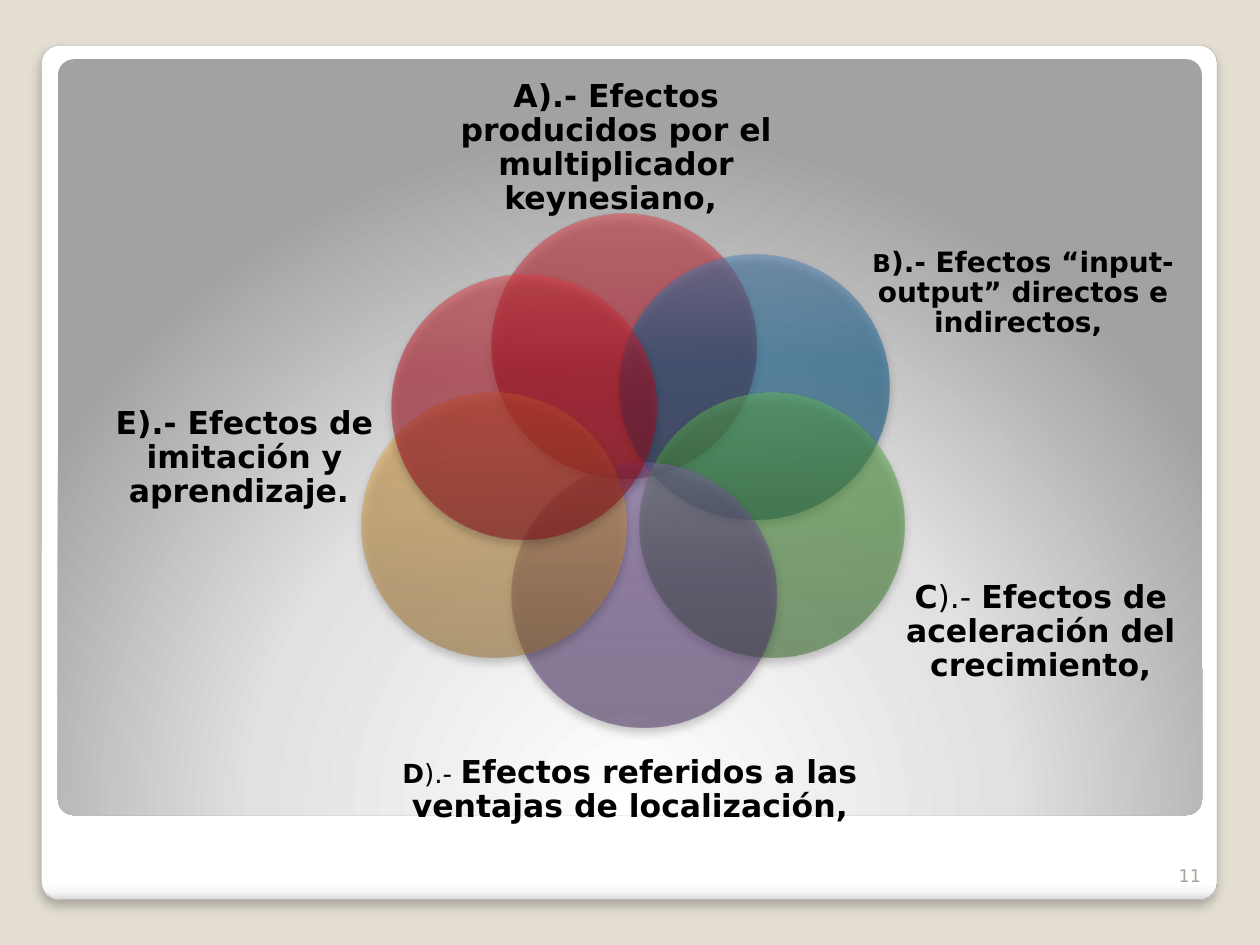
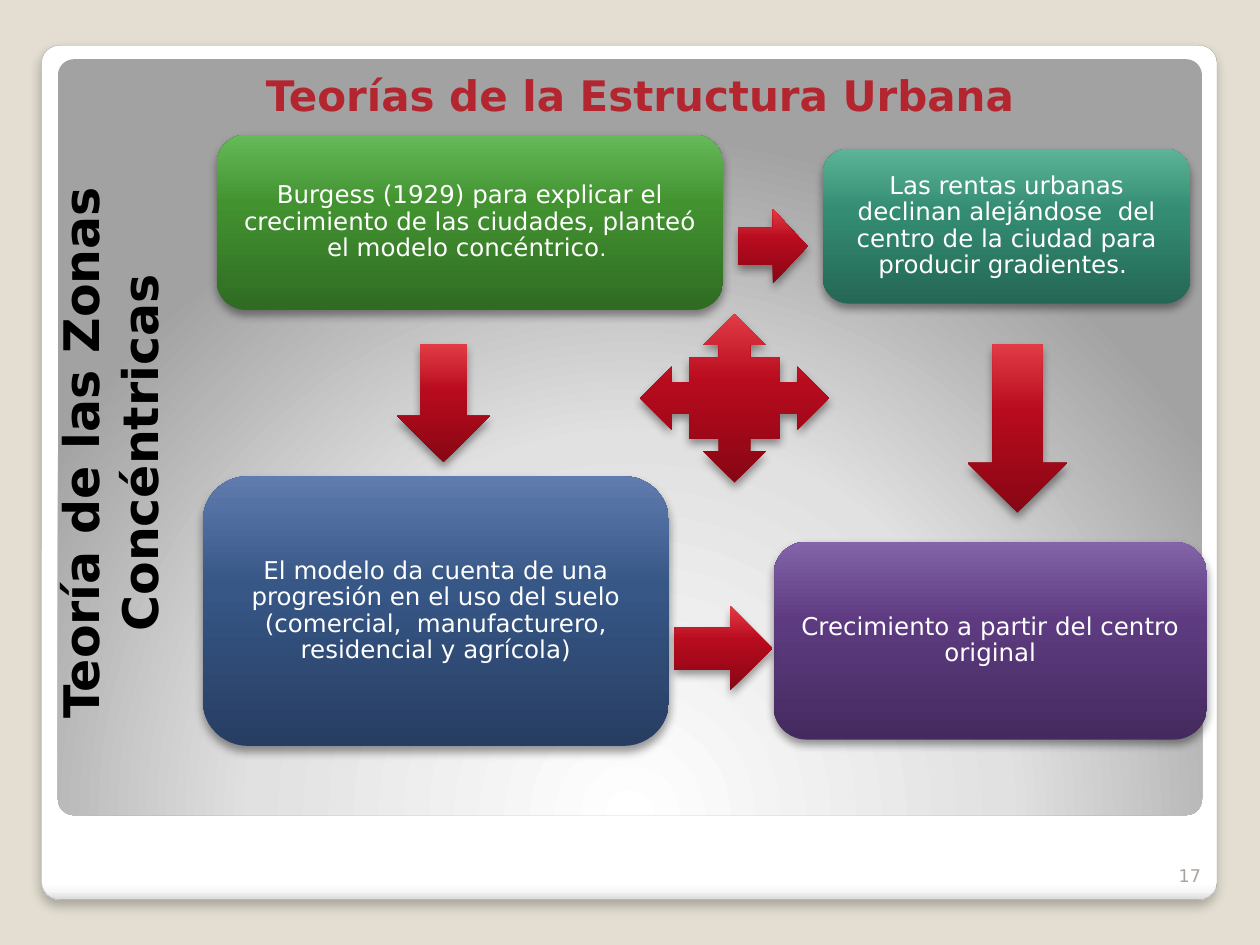
from dataclasses import dataclass

from lxml import etree
from pptx import Presentation
from pptx.dml.color import RGBColor
from pptx.enum import shapes, text
from pptx.oxml import ns
from pptx.util import Emu, Pt

EMU_PER_PX = 9144
SHAPE = shapes.MSO_SHAPE
ANCHOR = text.MSO_ANCHOR
ALIGN = text.PP_ALIGN


@dataclass(frozen=True)
class Theme:
    font: str = "DejaVu Sans"
    background: str = "E3DED1"
    ink: str = "000000"
    paper: str = "FFFFFF"
    title: str = "B3262F"
    number: str = "A8A49B"
    frame_line: str = "A4A4A4"
    red: tuple = ("870614", "B80B1E", "E13C45")
    blue: tuple = ("00436A", "035C91", "4A80B7")
    green: tuple = ("2F6B22", "429230", "66B959")
    purple: tuple = ("442A5E", "5E3B81", "8364A8")
    orange: tuple = ("9D702B", "D69A3E", "FFB14C")
    teal: tuple = ("246754", "348D73", "5CB397")
    navy: tuple = ("273E62", "375787", "607BAE")
    frame_stops: tuple = ((0, "FFFFFF"), (98, "FFFFFF"), (99, "F7F7F7"), (100, "DADADA"))
    panel_stops: tuple = ((0, "FFFFFF"), (55, "E1E1E1"), (100, "A2A2A2"))
    title_size: int = 24
    side_size: int = 28
    label_size: int = 18
    box_size: int = 14
    number_size: int = 10
    frame_shadow: tuple = (25, 6, 4)
    shape_shadow: tuple = (40, 5.2, 3)


def px(length):
    return Emu(length * EMU_PER_PX)


def add_node(parent, tag, **attributes):
    values = {name: str(value) for name, value in attributes.items()}
    return etree.SubElement(parent, ns.qn(tag), values)


def add_color(parent, color, opacity=100):
    node = add_node(parent, "a:srgbClr", val=color)
    if opacity < 100:
        add_node(node, "a:alpha", val=opacity * 1000)


class Deck:
    def __init__(self, theme):
        self.theme = theme
        self.presentation = Presentation()
        self.presentation.slide_width = px(1000)
        self.presentation.slide_height = px(750)
        self.slide = None
        fill = self.presentation.slide_master.background.fill
        fill.solid()
        fill.fore_color.rgb = RGBColor.from_string(theme.background)

    def add_slide(self, number, title=None):
        layout = self.presentation.slide_layouts[5 if title else 6]
        self.slide = self.presentation.slides.add_slide(layout)
        if len(self.presentation.slides) == 1:
            self.add_master_frame()
        if title:
            self.add_title(title)
        self.add_text((913, 668, 50, 40), [(number,)], self.theme.number_size,
                      self.theme.number, align=ALIGN.RIGHT, anchor=ANCHOR.BOTTOM)

    def add_master_frame(self):
        theme = self.theme
        frame = self.add_shape(SHAPE.ROUNDED_RECTANGLE, (33, 36, 933, 678),
                               theme.frame_stops, theme.frame_shadow, angle=90)
        frame.line.color.rgb = RGBColor.from_string(theme.frame_line)
        frame.line.width = Pt(0.16)
        panel = self.add_shape(SHAPE.ROUNDED_RECTANGLE, (46, 47, 908, 600),
                               theme.panel_stops, angle=None)
        tree = self.presentation.slide_master.shapes.element
        for order, shape in enumerate((frame, panel)):
            shape.adjustments[0] = 0.021
            shape.element.nvSpPr.cNvPr.set("id", str(90 + order))
            tree.insert(2 + order, shape.element)

    def add_title(self, title):
        shape = self.slide.shapes.title
        shape.left, shape.top, shape.width, shape.height = map(px, (58, 29, 900, 71))
        self.set_text(shape, [(title,)], self.theme.title_size, self.theme.title,
                      bold=True, anchor=ANCHOR.BOTTOM)

    def add_shape(self, kind, box, stops, shadow=None, angle=270, opacity=100):
        shape = self.slide.shapes.add_shape(kind, *map(px, box))
        gradient = etree.Element(ns.qn("a:gradFill"), rotWithShape="1")
        stop_list = add_node(gradient, "a:gsLst")
        for position, color in stops:
            add_color(add_node(stop_list, "a:gs", pos=position * 1000), color, opacity)
        if angle is None:
            circle = add_node(gradient, "a:path", path="circle")
            add_node(circle, "a:fillToRect", l=50000, t=175000, r=50000, b=-75000)
        else:
            add_node(gradient, "a:lin", ang=angle * 60000, scaled=0)
        properties = shape.element.spPr
        properties.find(ns.qn("a:prstGeom")).addnext(gradient)
        shape.line.fill.background()
        shape.shadow.inherit = False
        if shadow:
            darkness, blur, distance = shadow
            effects = properties.find(ns.qn("a:effectLst"))
            add_color(add_node(effects, "a:outerShdw", blurRad=Pt(blur), dist=Pt(distance),
                               dir=90 * 60000, algn="ctr", rotWithShape=0),
                      self.theme.ink, darkness)
        return shape

    def add_glossy(self, kind, box, colors, opacity=100):
        return self.add_shape(kind, box, tuple(zip((0, 60, 100), colors)),
                              self.theme.shape_shadow, opacity=opacity)

    def add_box(self, box, colors, runs):
        shape = self.add_glossy(SHAPE.ROUNDED_RECTANGLE, box, colors)
        self.set_text(shape, runs, self.theme.box_size, self.theme.paper,
                      spacing=0.9, insets=(6, 3))

    def add_text(self, box, runs, size, color, **style):
        shape = self.slide.shapes.add_textbox(*map(px, box))
        self.set_text(shape, runs, size, color, **style)
        return shape

    def add_label(self, box, runs):
        self.add_text(box, runs, self.theme.label_size, self.theme.ink,
                      bold=True, spacing=0.9, insets=(0, 0))

    def add_side_title(self, box, words):
        shape = self.add_text(box, [(words,)], self.theme.side_size, self.theme.ink,
                              bold=True, anchor=ANCHOR.TOP)
        shape.text_frame.auto_size = text.MSO_AUTO_SIZE.SHAPE_TO_FIT_TEXT
        shape.element.txBody.bodyPr.set("vert", "vert270")

    def set_text(self, shape, runs, size, color, bold=False, align=ALIGN.CENTER,
                 anchor=ANCHOR.MIDDLE, spacing=None, insets=(10, 5)):
        frame = shape.text_frame
        frame.word_wrap = True
        frame.auto_size = text.MSO_AUTO_SIZE.NONE
        frame.vertical_anchor = anchor
        frame.margin_left = frame.margin_right = px(insets[0])
        frame.margin_top = frame.margin_bottom = px(insets[1])
        paragraph = frame.paragraphs[0]
        paragraph.alignment = align
        paragraph.line_spacing = spacing
        font = paragraph.font
        font.name = self.theme.font
        font.size = Pt(size)
        font.bold = bold
        font.color.rgb = RGBColor.from_string(color)
        for words, *changes in runs:
            run = paragraph.add_run()
            run.text = words
            style = changes[0] if changes else {}
            if "size" in style:
                run.font.size = Pt(style["size"])
            if "bold" in style:
                run.font.bold = style["bold"]


def build_effects(deck):
    theme = deck.theme
    deck.add_slide("11")
    petals = [
        ((390, 170, 210, 210), theme.red),
        ((492, 202, 214, 210), theme.blue),
        ((508, 312, 210, 210), theme.green),
        ((406, 367, 210, 210), theme.purple),
        ((287, 312, 210, 210), theme.orange),
        ((311, 218, 210, 210), theme.red),
    ]
    for box, colors in petals:
        deck.add_glossy(SHAPE.OVAL, box, colors, opacity=50)
    labels = [
        ((358, 13, 262, 210),
         [("A).- Efectos producidos por el multiplicador keynesiano, ",)]),
        ((688, 155, 248, 156),
         [("B", {"size": 14}),
          (").- Efectos “input-output” directos e indirectos, ", {"size": 16})]),
        ((702, 414, 248, 175),
         [("C",), (").- ", {"bold": False}), ("Efectos de aceleración del crecimiento,",)]),
        ((258, 482, 484, 290),
         [("D", {"size": 15}), (").- ", {"size": 15, "bold": False}),
          ("Efectos referidos a las ventajas de localización,",)]),
        ((70, 281, 248, 166), [("E).- Efectos de imitación y aprendizaje. ",)]),
    ]
    for box, runs in labels:
        deck.add_label(box, runs)


def build_zones(deck):
    theme = deck.theme
    deck.add_slide("17", "Teorías de la Estructura Urbana")
    boxes = [
        ((172, 107, 402, 139), theme.green,
         [("Burgess (1929) para explicar el crecimiento de las ciudades, "
           "planteó el modelo concéntrico",), (". ", {"size": 12})]),
        ((653, 118, 292, 123), theme.teal,
         [("Las rentas urbanas declinan alejándose  del centro de la ciudad "
           "para producir gradientes. ",)]),
        ((161, 378, 370, 214), theme.navy,
         [("El modelo da cuenta de una progresión en el uso del suelo "
           "(comercial,  manufacturero, residencial y agrícola)",)]),
        ((614, 430, 344, 157), theme.purple,
         [("Crecimiento a partir del centro original",)]),
    ]
    for box, colors, runs in boxes:
        deck.add_box(box, colors, runs)
    deck.add_side_title((35, 84, 114, 551), "Teoría de las Zonas Concéntricas")
    arrows = [
        (SHAPE.DOWN_ARROW, (768, 273, 79, 134)),
        (SHAPE.RIGHT_ARROW, (586, 166, 55, 59)),
        (SHAPE.RIGHT_ARROW, (535, 481, 78, 67)),
        (SHAPE.DOWN_ARROW, (315, 273, 74, 94)),
        (SHAPE.QUAD_ARROW_CALLOUT, (508, 249, 150, 134)),
    ]
    for kind, box in arrows:
        deck.add_glossy(kind, box, theme.red)


def main():
    deck = Deck(Theme())
    build_effects(deck)
    build_zones(deck)
    deck.presentation.save("out.pptx")


if __name__ == "__main__":
    main()
